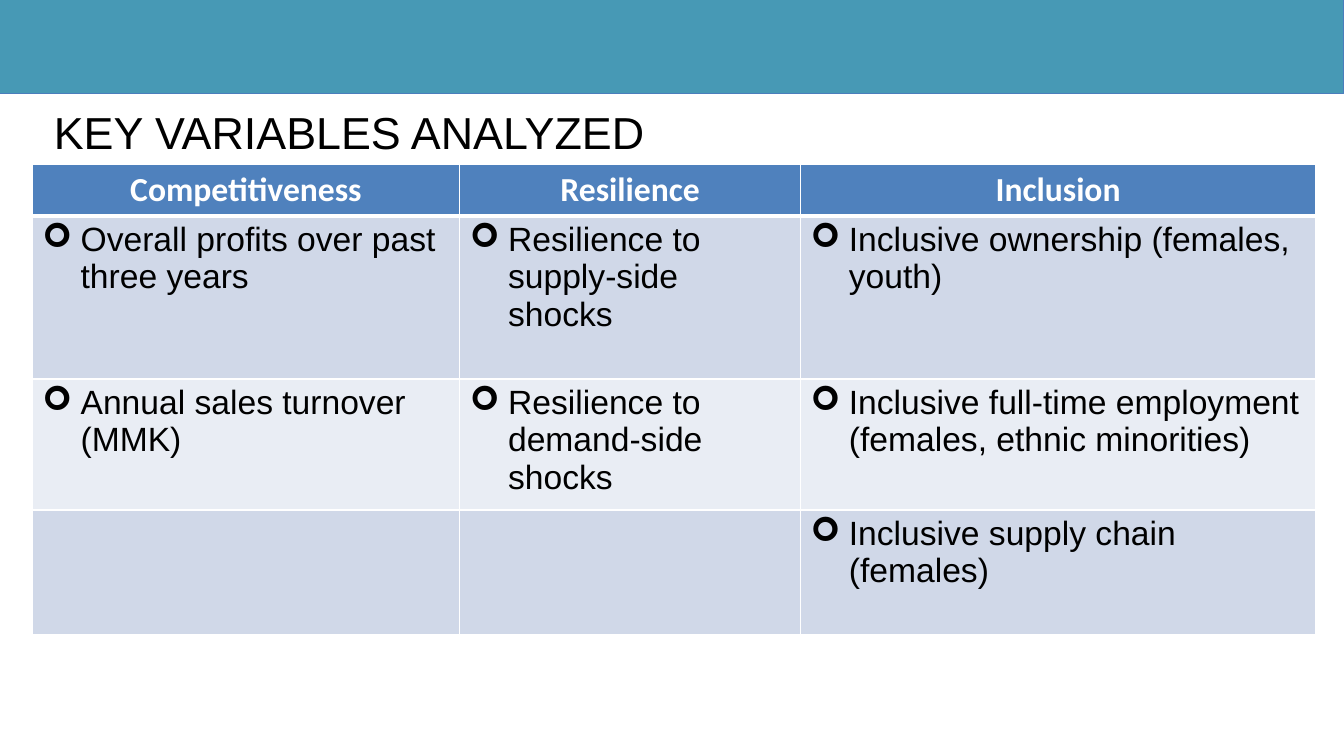
from dataclasses import dataclass
from typing import Any

from lxml import etree
from pptx import Presentation
from pptx.dml.color import RGBColor
from pptx.enum.shapes import MSO_SHAPE
from pptx.enum.text import MSO_ANCHOR, PP_ALIGN
from pptx.oxml.ns import qn
from pptx.util import Emu, Pt

RECT = MSO_SHAPE.RECTANGLE
MIDDLE = MSO_ANCHOR.MIDDLE
CENTER, LEFT = PP_ALIGN.CENTER, PP_ALIGN.LEFT
SCALE = 9144


@dataclass(frozen=True)
class Theme:
    """Colours, fonts and type sizes of the slide."""
    band: str = "4799B5"
    edge: str = "4B7EBC"
    head: str = "4F81BD"
    odd: str = "D0D8E8"
    even: str = "E9EDF4"
    white: str = "FFFFFF"
    black: str = "000000"
    sans: str = "Arial"
    label: str = "Calibri"
    title: int = 32
    body: int = 24


@dataclass(frozen=True)
class Column:
    """A table column with its heading and its bullet entries."""
    head: str
    width: int
    items: tuple[str, ...]


THEME = Theme()
ROWS = (51, 162, 125, 124)
COLUMNS = (
    Column("Competitiveness", 424, (
        "Overall profits over past three years",
        "Annual sales turnover (MMK)", "")),
    Column("Resilience", 338, (
        "Resilience to supply-side shocks",
        "Resilience to demand-side shocks", "")),
    Column("Inclusion", 511, (
        "Inclusive ownership (females, youth)",
        "Inclusive full-time employment (females, ethnic minorities)",
        "Inclusive supply chain (females)")),
)


def px(size: int) -> Emu:
    """Turn px into EMU."""
    return Emu(size * SCALE)


def style(target: Any, values: dict[str, Any]) -> None:
    """Set each attribute named in the dict."""
    for name, value in values.items():
        setattr(target, name, value)


def paint(fill: Any, tone: str) -> None:
    """Give a fill one solid colour."""
    fill.solid()
    fill.fore_color.rgb = RGBColor.from_string(tone)


def write(para: Any, text: str, tone: str, form: dict[str, Any]) -> None:
    """Put styled text into a paragraph."""
    if text:
        para.text = text
    for part in (para.font, *(run.font for run in para.runs)):
        style(part, form)
        part.color.rgb = RGBColor.from_string(tone)


def bullet(para: Any) -> None:
    """Give a paragraph an arrow bullet with a hanging indent."""
    props = para._p.get_or_add_pPr()
    props.set("marL", str(px(38)))
    props.set("indent", str(px(-38)))
    etree.SubElement(props, qn("a:buFont"), typeface="Wingdings")
    etree.SubElement(props, qn("a:buChar"), char="➢")


def border(cell: Any, base: int) -> None:
    """Draw white lines around a cell, with its own bottom width."""
    props = cell._tc.get_or_add_tcPr()
    widths = {"lnL": 1, "lnR": 1, "lnT": 1, "lnB": base}
    for spot, (side, width) in enumerate(widths.items()):
        line = etree.Element(qn(f"a:{side}"), w=str(Pt(width)))
        fill = etree.SubElement(line, qn("a:solidFill"))
        etree.SubElement(fill, qn("a:srgbClr"), val=THEME.white)
        props.insert(spot, line)


def banner(slide: Any, width: int) -> None:
    """Draw the band across the top."""
    band = slide.shapes.add_shape(RECT, 0, 0, px(width), px(93))
    band.shadow.inherit = False
    paint(band.fill, THEME.band)
    paint(band.line.fill, THEME.edge)
    band.line.width = Pt(0.75)


def title(slide: Any) -> None:
    """Write the slide title."""
    box = slide.shapes.add_textbox(0, px(96), px(693), px(65))
    frame = box.text_frame
    style(frame, {"word_wrap": True, "vertical_anchor": MIDDLE,
                  "margin_left": px(10), "margin_right": px(10),
                  "margin_top": px(5), "margin_bottom": 0})
    para = frame.paragraphs[0]
    para.alignment = CENTER
    write(para, "KEY VARIABLES ANALYZED", THEME.black,
          {"name": THEME.sans, "size": Pt(THEME.title), "bold": False})


def entry(cell: Any, row: int, text: str) -> None:
    """Fill one table cell as heading or bullet entry."""
    top = row == 0
    paint(cell.fill, THEME.head if top else THEME.odd if row % 2 else THEME.even)
    border(cell, 3 if top else 1)
    para = cell.text_frame.paragraphs[0]
    para.alignment = CENTER if top else LEFT
    if text and not top:
        bullet(para)
    write(para, text, THEME.white if top else THEME.black,
          {"name": THEME.label if top else THEME.sans,
           "size": Pt(THEME.body), "bold": top})


def grid(slide: Any) -> None:
    """Build the table of variables."""
    width = sum(col.width for col in COLUMNS)
    frame = slide.shapes.add_table(len(ROWS), len(COLUMNS), px(32), px(163),
                                   px(width), px(sum(ROWS)))
    table = frame.table
    for row, height in enumerate(ROWS):
        table.rows[row].height = px(height)
    for spot, col in enumerate(COLUMNS):
        table.columns[spot].width = px(col.width)
        for row, text in enumerate((col.head, *col.items)):
            entry(table.cell(row, spot), row, text)


def main() -> None:
    """Build and save the slide."""
    deck = Presentation()
    width = 1333
    style(deck, {"slide_width": px(width), "slide_height": px(750)})
    slide = deck.slides.add_slide(deck.slide_layouts[6])
    paint(slide.background.fill, THEME.white)
    banner(slide, width)
    title(slide)
    grid(slide)
    deck.save("out.pptx")


if __name__ == "__main__":
    main()
